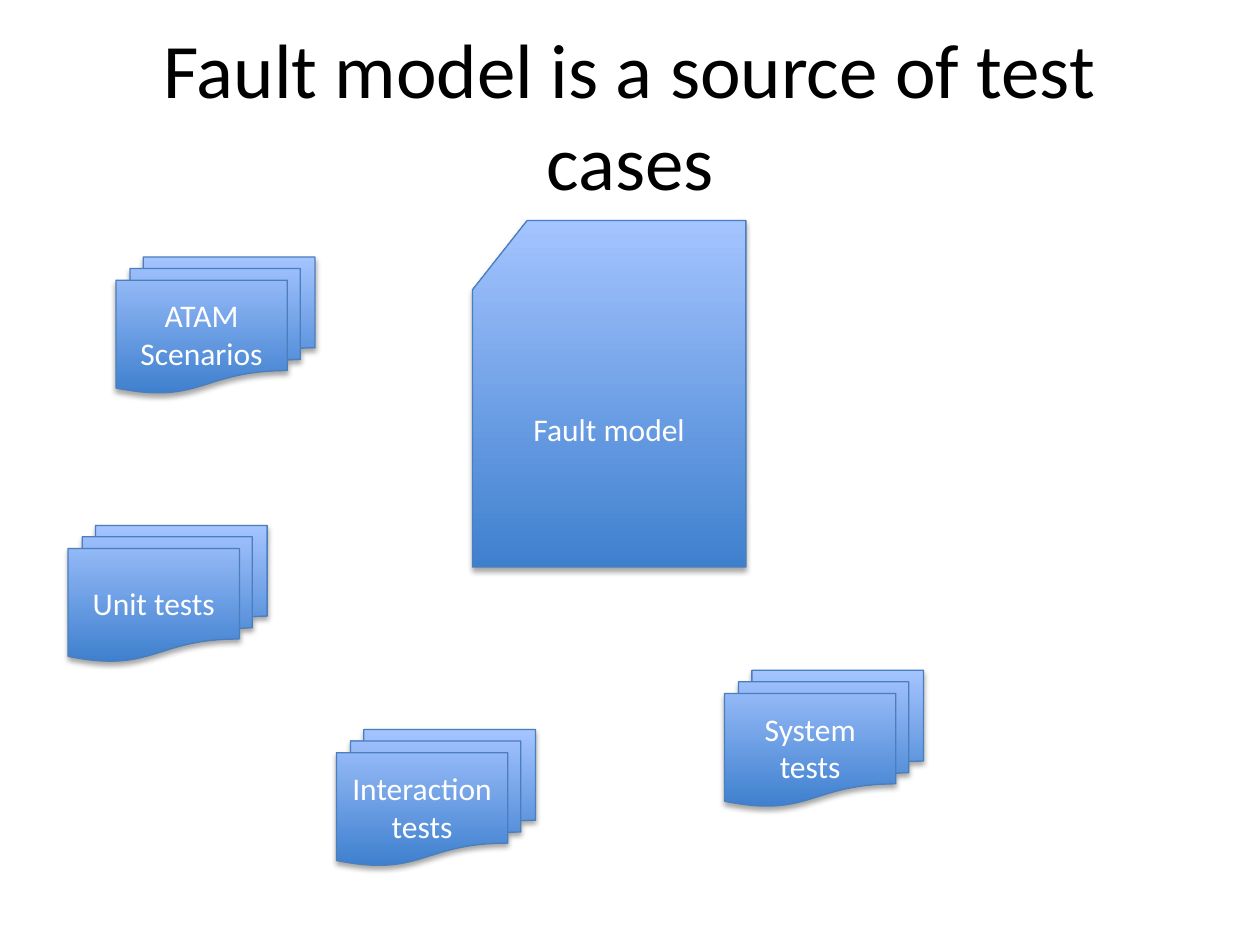
from lxml.etree import SubElement
from pptx import Presentation
from pptx.dml.color import RGBColor
from pptx.enum.shapes import MSO_SHAPE
from pptx.enum.text import MSO_ANCHOR, PP_ALIGN
from pptx.oxml.ns import qn
from pptx.util import Inches, Pt

# Content: each shape is (lines of text, left, top)
TITLE = "Fault model is a source of test cases"
FAULT_MODEL = (["Fault model"], 3.75, 1.75)
TEST_SOURCES = [
    (["Unit tests"], 0.54, 4.17),
    (["ATAM", "Scenarios"], 0.92, 2.04),
    (["Interaction", "tests"], 2.67, 5.79),
    (["System tests"], 5.75, 5.32),
]
CARD_SIZE = (2.17, 2.75)
DOCUMENT_SIZE = (1.58, 1.08)


class Theme:
    font = "Calibri"
    title_size, label_size = 44, 18
    title_color, label_color = "000000", "FFFFFF"
    gradient = ("3F80CE", "A4C4FF")  # bottom, top
    line_color, line_width = "4B7EBC", 0.75
    shadow_color, shadow_alpha = "000000", 35
    shadow_blur, shadow_distance = 3.1, 1.8


def write_text(frame, lines, size, color):
    frame.word_wrap = True
    frame.vertical_anchor = MSO_ANCHOR.MIDDLE
    for index, line in enumerate(lines):
        para = frame.add_paragraph() if index else frame.paragraphs[0]
        para.alignment = PP_ALIGN.CENTER
        span = para.add_run()
        span.text = line
        span.font.name = Theme.font
        span.font.size = Pt(size)
        span.font.color.rgb = RGBColor.from_string(color)


def add_drop_shadow(shape):
    shape.shadow.inherit = False
    effects = shape._element.spPr.find(qn("a:effectLst"))
    shadow = SubElement(
        effects, qn("a:outerShdw"), blurRad=str(Pt(Theme.shadow_blur)),
        dist=str(Pt(Theme.shadow_distance)), dir="5400000", rotWithShape="0")
    color = SubElement(shadow, qn("a:srgbClr"), val=Theme.shadow_color)
    SubElement(color, qn("a:alpha"), val=str(Theme.shadow_alpha * 1000))


def add_card(page, kind, content, size):
    lines, left, top = content
    card = page.shapes.add_shape(
        kind, *(Inches(value) for value in (left, top, *size)))
    card.fill.gradient()
    card.fill.gradient_angle = 90
    for stop, color, position in zip(card.fill.gradient_stops, Theme.gradient, (0, 1)):
        stop.color.rgb = RGBColor.from_string(color)
        stop.position = position
    card.line.color.rgb = RGBColor.from_string(Theme.line_color)
    card.line.width = Pt(Theme.line_width)
    add_drop_shadow(card)
    write_text(card.text_frame, lines, Theme.label_size, Theme.label_color)


def main():
    deck = Presentation()
    deck.slide_width, deck.slide_height = Inches(10), Inches(7.5)
    page = deck.slides.add_slide(deck.slide_layouts[5])

    # Title
    title = page.shapes.title
    title.left, title.top = Inches(0.5), Inches(0.28)
    title.width, title.height = Inches(9), Inches(1.25)
    write_text(title.text_frame, [TITLE], Theme.title_size, Theme.title_color)

    # Fault model and the test sources around it
    add_card(page, MSO_SHAPE.FLOWCHART_CARD, FAULT_MODEL, CARD_SIZE)
    for source in TEST_SOURCES:
        add_card(page, MSO_SHAPE.FLOWCHART_MULTIDOCUMENT, source, DOCUMENT_SIZE)

    deck.save("out.pptx")


if __name__ == "__main__":
    main()
